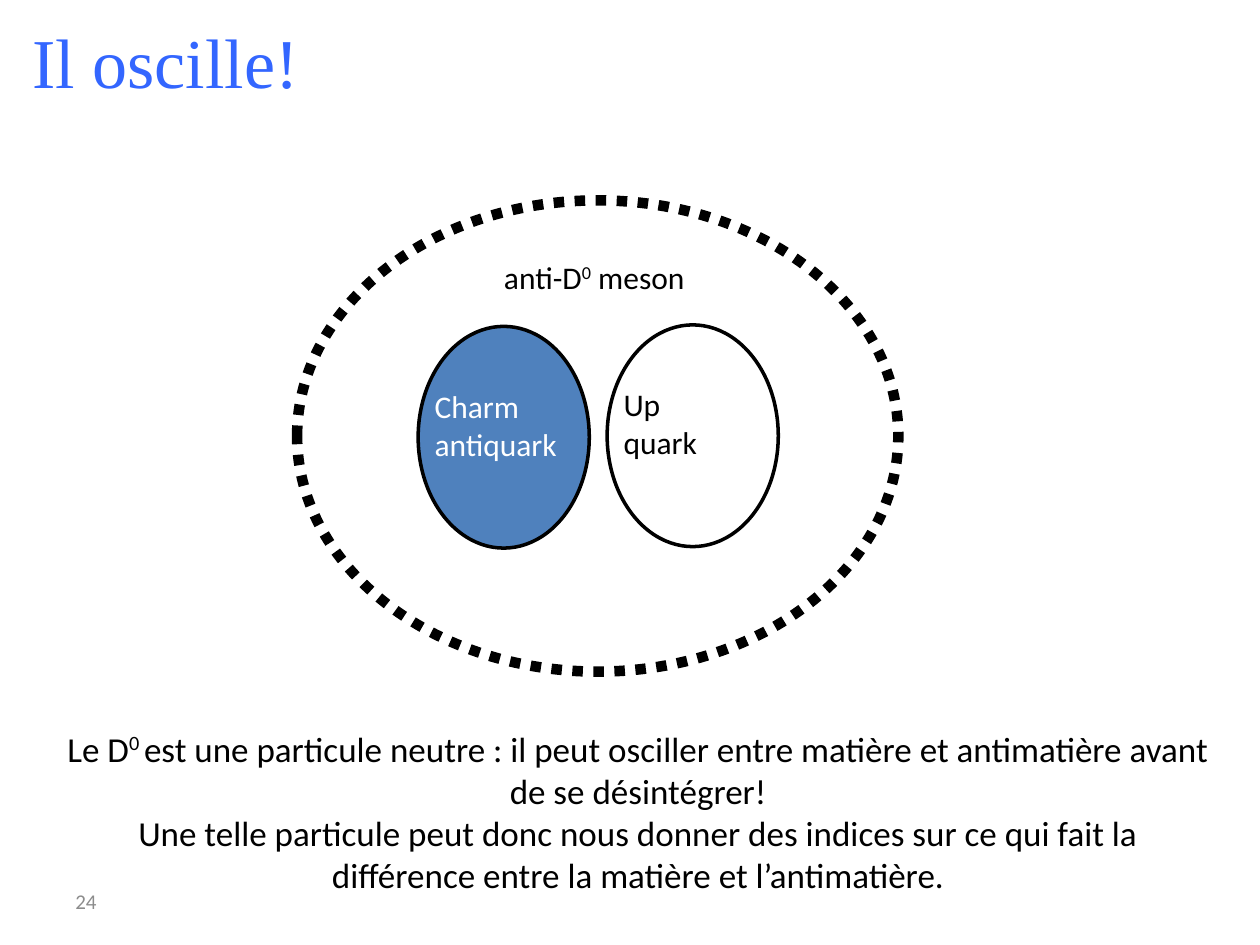
from dataclasses import dataclass

from pptx import Presentation
from pptx.dml.color import RGBColor
from pptx.enum.dml import MSO_LINE
from pptx.enum.shapes import MSO_SHAPE
from pptx.enum.text import MSO_ANCHOR, MSO_AUTO_SIZE, PP_ALIGN
from pptx.util import Cm, Pt

COLORS = {
    "black": "000000",
    "white": "FFFFFF",
    "blue": "4F81BD",
    "title": "3366FF",
    "grey": "8C8C8C",
}


@dataclass
class Box:
    left: float
    top: float
    width: float
    height: float

    def lengths(self) -> tuple:
        return Cm(self.left), Cm(self.top), Cm(self.width), Cm(self.height)


@dataclass
class Quark:
    left: float
    top: float
    lines: list[str]
    fill: str
    ink: str


QUARKS = [
    Quark(8.43, 6.58, ["Charm antiquark"], "blue", "white"),
    Quark(12.24, 6.55, ["Up", "quark"], "white", "black"),
]


def rgb(color: str) -> RGBColor:
    return RGBColor.from_string(COLORS[color])


def write(frame, lines: list[str], *, size=18, color="black", font="Calibri",
          align=PP_ALIGN.LEFT, anchor=MSO_ANCHOR.TOP, wrap=True, inset=0):
    """Fill a text frame, one paragraph a line; text between ^ marks is superscript."""
    frame.word_wrap = wrap
    frame.vertical_anchor = anchor
    if inset is not None:
        frame.margin_left = frame.margin_right = Cm(inset)
        frame.margin_top = frame.margin_bottom = Cm(inset)
    for index, line in enumerate(lines):
        paragraph = frame.add_paragraph() if index else frame.paragraphs[0]
        paragraph.alignment = align
        for part, words in enumerate(line.split("^")):
            run = paragraph.add_run()
            run.text = words
            run.font.name = font
            run.font.size = Pt(size)
            run.font.color.rgb = rgb(color)
            if part % 2:
                run._r.get_or_add_rPr().set("baseline", "32000")


def add_text(slide, box: Box, lines: list[str], **text_format):
    frame = slide.shapes.add_textbox(*box.lengths()).text_frame
    write(frame, lines, **text_format)
    return frame


def add_figure(slide, kind, box: Box, fill: str | None = None, line_width: float = 0):
    figure = slide.shapes.add_shape(kind, *box.lengths())
    figure.shadow.inherit = False
    if fill:
        figure.fill.solid()
        figure.fill.fore_color.rgb = rgb(fill)
    else:
        figure.fill.background()
    if line_width:
        figure.line.color.rgb = rgb("black")
        figure.line.width = Pt(line_width)
    else:
        figure.line.fill.background()
    return figure


def add_quark(slide, quark: Quark) -> None:
    add_figure(slide, MSO_SHAPE.OVAL, Box(quark.left, quark.top, 3.45, 4.47),
               quark.fill, line_width=2)
    label = add_figure(slide, MSO_SHAPE.RECTANGLE,
                       Box(quark.left + 0.33, quark.top + 1.22, 2.77, 1.75), quark.fill)
    write(label.text_frame, quark.lines, color=quark.ink)


def add_title(slide) -> None:
    title = slide.shapes.title
    title.left, title.top, title.width, title.height = Box(0.66, 0.38, 25.35, 2.64).lengths()
    title.text_frame.auto_size = MSO_AUTO_SIZE.NONE
    write(title.text_frame, ["Il oscille!"], size=40, color="title", font="Times New Roman")


def main() -> None:
    deck = Presentation()
    deck.slide_width, deck.slide_height = Cm(25.4), Cm(19.05)
    slide = deck.slides.add_slide(deck.slide_layouts[5])

    add_title(slide)
    add_text(slide, Box(1.27, 17.65, 5.92, 1.02), ["24"], size=12, color="grey",
             anchor=MSO_ANCHOR.MIDDLE, inset=None)

    meson = add_figure(slide, MSO_SHAPE.OVAL, Box(5.99, 4.04, 12.12, 9.5), line_width=6)
    meson.line.dash_style = MSO_LINE.ROUND_DOT
    meson_label = add_text(slide, Box(10.16, 5.21, 3.71, 0.76), ["anti-D^0^ meson"], wrap=False)
    meson_label.auto_size = MSO_AUTO_SIZE.SHAPE_TO_FIT_TEXT
    for quark in QUARKS:
        add_quark(slide, quark)

    add_text(slide, Box(1.27, 14.66, 23.19, 3.45), [
        "Le D^0 ^est une particule neutre : il peut osciller entre matière et antimatière "
        "avant de se désintégrer!",
        "Une telle particule peut donc nous donner des indices sur ce qui fait la "
        "différence entre la matière et l’antimatière.",
    ], size=20, align=PP_ALIGN.CENTER)

    deck.save("out.pptx")


if __name__ == "__main__":
    main()
